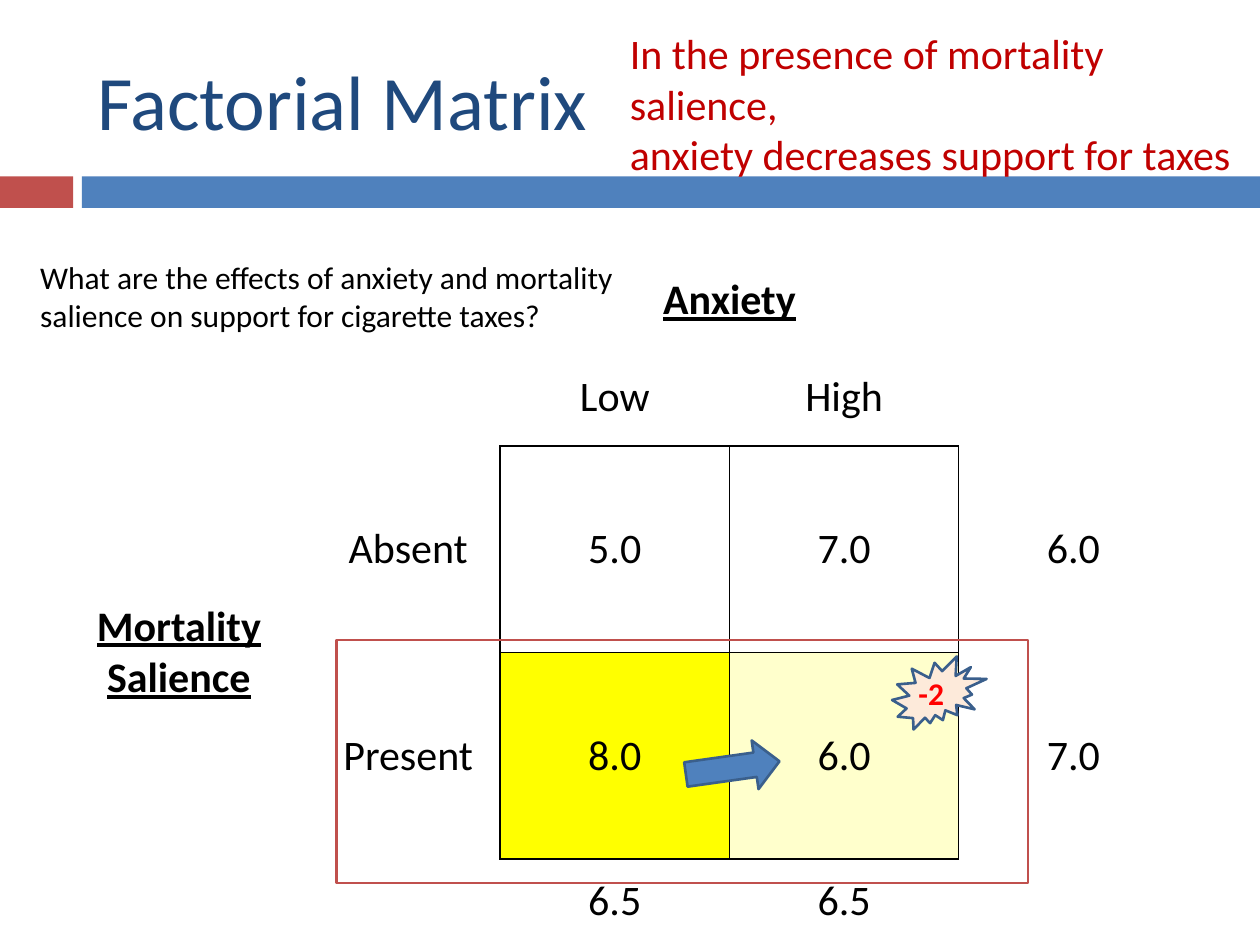
from dataclasses import dataclass
from lxml.etree import SubElement
from pptx import Presentation
from pptx.dml.color import RGBColor as RGB
from pptx.enum.shapes import MSO_SHAPE as SHAPE
from pptx.enum.text import MSO_ANCHOR as ANCHOR, PP_ALIGN as ALIGN
from pptx.oxml.ns import qn
from pptx.util import Inches, Pt


@dataclass(frozen=True)
class Theme:
    font: str = "Calibri"
    title_size: int = 44
    body_size: int = 24
    note_size: int = 18
    ink: str = "000000"
    navy: str = "1F497D"
    blue: str = "4F81BD"
    outline: str = "3A5F8C"
    red: str = "C0504D"
    dark_red: str = "C00000"
    bright_red: str = "FF0000"
    peach: str = "FDEADA"
    white: str = "FFFFFF"
    yellow: str = "FFFF00"
    cream: str = "FFFFCC"
    line: float = 1.5
    border: float = 1
    plain_table: str = "{2D5ABB26-0587-4C30-8999-92F81FD0307C}"


class SlideBuilder:
    def __init__(self, slide, theme):
        self.s = slide
        self.t = theme

    def add_runs(self, tf, text, size, color, bold=False, underline=False, align=ALIGN.LEFT):
        p = tf.paragraphs[0]
        p.alignment = align
        for i, line in enumerate(text.split("\n")):
            if i:
                p.add_line_break()
            r = p.add_run()
            r.text = line
            r.font.name = self.t.font
            r.font.size = Pt(size)
            r.font.color.rgb = RGB.from_string(color)
            r.font.bold = bold
            r.font.underline = underline

    def title(self, text, box):
        sp = self.s.shapes.title
        sp.left, sp.top, sp.width, sp.height = map(Inches, box)
        sp.text_frame.vertical_anchor = ANCHOR.MIDDLE
        self.add_runs(sp.text_frame, text, self.t.title_size, self.t.navy)

    def text(self, text, box, size, color, bold=False, wrap=False):
        sp = self.s.shapes.add_textbox(*map(Inches, box))
        sp.text_frame.word_wrap = wrap
        self.add_runs(sp.text_frame, text, size, color, bold)

    def shape(self, kind, box, fill=None, line=None, rotation=0):
        sp = self.s.shapes.add_shape(kind, *map(Inches, box))
        sp.shadow.inherit = False
        sp.rotation = rotation
        if fill:
            sp.fill.solid()
            sp.fill.fore_color.rgb = RGB.from_string(fill)
        else:
            sp.fill.background()
        if line:
            sp.line.color.rgb = RGB.from_string(line)
            sp.line.width = Pt(self.t.line)
        else:
            sp.line.fill.background()

    def borders(self, cell):
        tcPr = cell._tc.get_or_add_tcPr()
        for side in ("lnL", "lnR", "lnT", "lnB"):
            ln = SubElement(tcPr, qn(f"a:{side}"), w=str(Pt(self.t.border)))
            fill = SubElement(ln, qn("a:solidFill"))
            SubElement(fill, qn("a:srgbClr"), val=self.t.ink)

    def table(self, rows, box, widths, heights, merges, headings, fills):
        frame = self.s.shapes.add_table(len(heights), len(widths), *map(Inches, box))
        table = frame.table
        table.first_row = table.horz_banding = False
        table._tbl.tblPr.find(qn("a:tableStyleId")).text = self.t.plain_table
        for col, width in zip(table.columns, widths):
            col.width = Inches(width)
        for row, height in zip(table.rows, heights):
            row.height = Inches(height)
        for start, end in merges:
            table.cell(*start).merge(table.cell(*end))
        for i, row in enumerate(rows):
            for j, text in enumerate(row):
                cell = table.cell(i, j)
                cell.vertical_anchor = ANCHOR.MIDDLE
                if (i, j) in fills:
                    self.borders(cell)
                    cell.fill.solid()
                    cell.fill.fore_color.rgb = RGB.from_string(fills[i, j])
                else:
                    cell.fill.background()
                if text:
                    strong = (i, j) in headings
                    self.add_runs(cell.text_frame, text, self.t.body_size, self.t.ink,
                                  strong, strong, ALIGN.CENTER)


def main():
    prs = Presentation()
    prs.slide_width, prs.slide_height = Inches(10), Inches(7.5)
    t = Theme()
    b = SlideBuilder(prs.slides.add_slide(prs.slide_layouts[5]), t)

    b.shape(SHAPE.RECTANGLE, (0, 1.4, 0.58, 0.25), t.red)
    b.shape(SHAPE.RECTANGLE, (0.65, 1.4, 9.35, 0.25), t.blue)
    b.title("Factorial Matrix", (0.67, 0.25, 8.92, 1.08))

    rows = [
        ["", "", "Anxiety", "", ""],
        ["", "", "Low", "High", ""],
        ["Mortality\nSalience", "Absent", "5.0", "7.0", "6.0"],
        ["", "Present", "8.0", "6.0", "7.0"],
        ["", "", "6.5", "6.5", ""],
    ]
    b.table(
        rows, (0.33, 2, 9.1, 5.5),
        widths=[2.18, 1.46] + [1.82] * 3,
        heights=[0.77, 0.77, 1.64, 1.64, 0.67],
        merges=[((0, 2), (0, 3)), ((2, 0), (3, 0))],
        headings={(0, 2), (2, 0)},
        fills={(2, 2): t.white, (2, 3): t.white, (3, 2): t.yellow, (3, 3): t.cream},
    )

    b.text("What are the effects of anxiety and mortality \nsalience on support for cigarette taxes?",
           (0.22, 2, 4.91, 0.71), t.note_size, t.ink)
    b.text("In the presence of mortality salience, \nanxiety decreases support for taxes",
           (4.9, 0.17, 5.1, 0.91), t.body_size, t.dark_red, wrap=True)
    b.shape(SHAPE.EXPLOSION2, (7.08, 5.21, 0.75, 0.58), t.peach, t.outline)
    b.text("-2", (7.19, 5.3, 0.41, 0.4), t.note_size, t.bright_red, bold=True)
    b.shape(SHAPE.RECTANGLE, (2.67, 5.08, 5.49, 1.93), line=t.red)
    b.shape(SHAPE.RIGHT_ARROW, (5.44, 5.9, 0.75, 0.39), t.blue, t.outline, rotation=352)

    prs.save("out.pptx")


if __name__ == "__main__":
    main()
